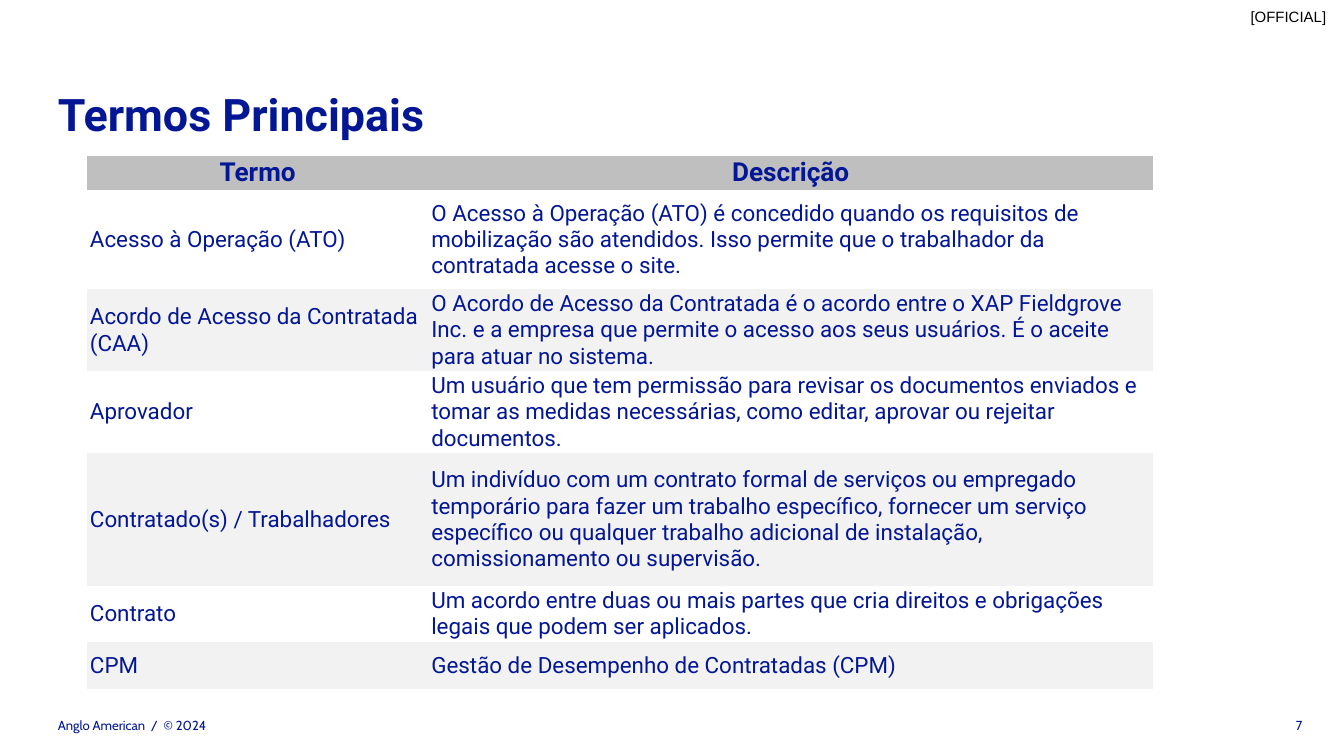
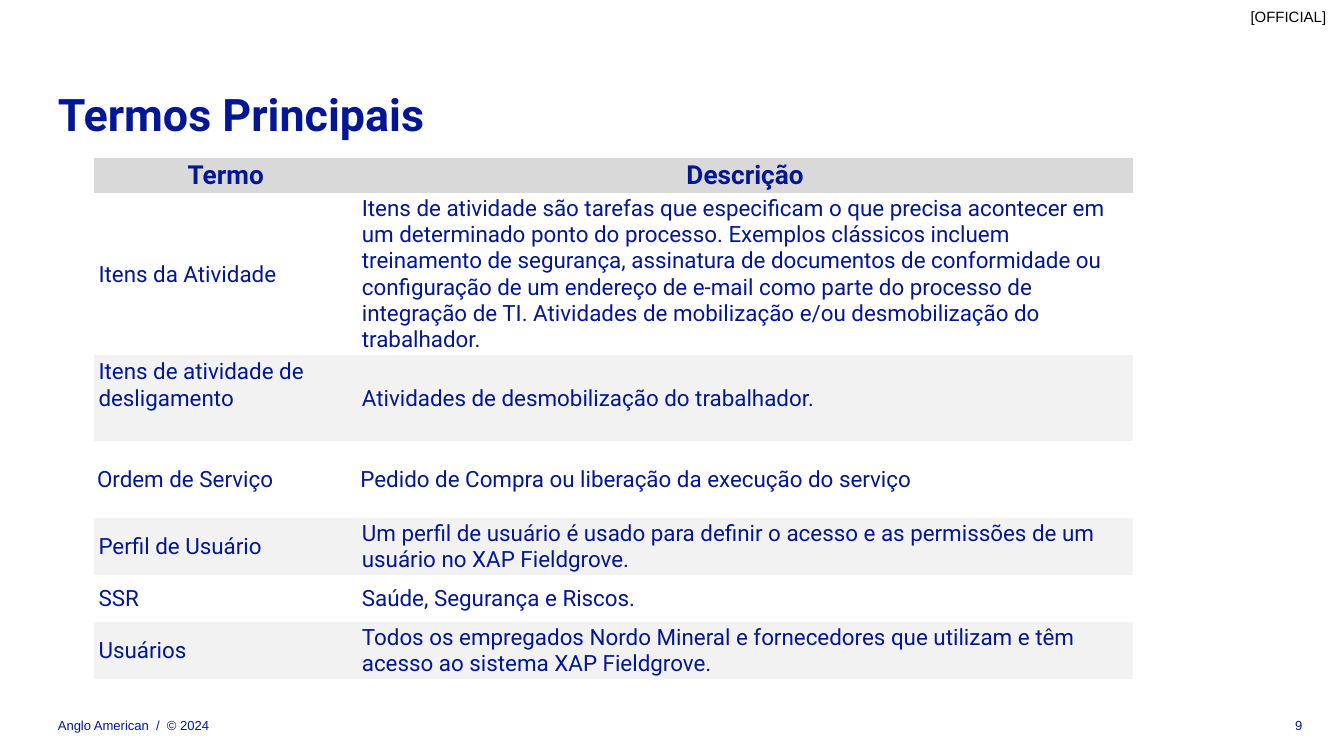
import dataclasses

import pptx
import pptx.dml.color
import pptx.enum.text
import pptx.oxml.ns
import pptx.util

Pt = pptx.util.Pt
Align = pptx.enum.text.PP_ALIGN
Anchor = pptx.enum.text.MSO_ANCHOR


@dataclasses.dataclass(frozen=True)
class Theme:
    blue: str = "031795"
    black: str = "000000"
    band: str = "F2F2F2"
    text_font: str = "Roboto"
    mark_font: str = "Arial"
    title_size: float = 24
    title_line: float = 49.5
    header_size: float = 14
    cell_size: float = 12
    mark_size: float = 8
    footer_size: float = 7
    plain_table: str = "{2D5ABB26-0587-4C30-8999-92F81FD0307C}"


THEME = Theme()
TITLE_ONLY = 5
LEFT = 31


@dataclasses.dataclass(frozen=True)
class Glossary:
    """One page of terms; each row is (height, term, description)."""
    page: str
    footer_font: str
    header_fill: str
    left: float
    top: float
    columns: tuple
    header_height: float
    inset: tuple
    rows: tuple
    row_insets: dict = dataclasses.field(default_factory=dict)
    extra_bottom: dict = dataclasses.field(default_factory=dict)


GLOSSARIES = (
    Glossary(
        page="7", footer_font="Cabin", header_fill="BFBFBF",
        left=46.6, top=83.6, columns=(182.9, 388.3), header_height=18.2,
        inset=(1.6, 0.8),
        rows=(
            (53.2, "Acesso à Operação (ATO)",
             "O Acesso à Operação (ATO) é concedido quando os requisitos de mobilização "
             "são atendidos. Isso permite que o trabalhador da contratada acesse o site."),
            (43.9, "Acordo de Acesso da Contratada (CAA)",
             "O Acordo de Acesso da Contratada é o acordo entre o XAP Fieldgrove Inc. e a "
             "empresa que permite o acesso aos seus usuários. É o aceite para atuar no sistema."),
            (43.9, "Aprovador",
             "Um usuário que tem permissão para revisar os documentos enviados e tomar as "
             "medidas necessárias, como editar, aprovar ou rejeitar documentos."),
            (71.2, "Contratado(s) / Trabalhadores",
             "Um indivíduo com um contrato formal de serviços ou empregado temporário para "
             "fazer um trabalho específico, fornecer um serviço específico ou qualquer "
             "trabalho adicional de instalação, comissionamento ou supervisão."),
            (30, "Contrato",
             "Um acordo entre duas ou mais partes que cria direitos e obrigações legais que "
             "podem ser aplicados."),
            (25.2, "CPM", "Gestão de Desempenho de Contratadas (CPM)"),
        ),
    ),
    Glossary(
        page="9", footer_font="Arial", header_fill="D9D9D9",
        left=50.4, top=84.6, columns=(141.1, 415.5), header_height=18.8,
        inset=(2.4, 1.2),
        rows=(
            (86.8, "Itens da Atividade",
             "Itens de atividade são tarefas que especificam o que precisa acontecer em um "
             "determinado ponto do processo. Exemplos clássicos incluem treinamento de "
             "segurança, assinatura de documentos de conformidade ou configuração de um "
             "endereço de e-mail como parte do processo de integração de TI. Atividades de "
             "mobilização e/ou desmobilização do trabalhador."),
            (46.1, "Itens de atividade de desligamento",
             "Atividades de desmobilização do trabalhador."),
            (41, "Ordem de Serviço", "Pedido de Compra ou liberação da execução do serviço"),
            (30.5, "Perfil de Usuário",
             "Um perfil de usuário é usado para definir o acesso e as permissões de um "
             "usuário no XAP Fieldgrove."),
            (25.2, "SSR", "Saúde, Segurança e Riscos."),
            (30.5, "Usuários",
             "Todos os empregados Nordo Mineral e fornecedores que utilizam e têm acesso ao "
             "sistema XAP Fieldgrove."),
        ),
        row_insets={3: (1.6, 0.8)},
        extra_bottom={(2, 0): 14},
    ),
)


def style_text(frame, font, size, color, align=Align.LEFT, bold=False):
    for para in frame.paragraphs:
        para.alignment = align
        for span in para.runs:
            span.font.name = font
            span.font.size = Pt(size)
            span.font.bold = bold
            span.font.color.rgb = pptx.dml.color.RGBColor.from_string(color)


def set_frame(frame, anchor):
    frame.margin_left = frame.margin_top = frame.margin_right = frame.margin_bottom = 0
    frame.word_wrap = True
    frame.auto_size = pptx.enum.text.MSO_AUTO_SIZE.NONE
    frame.vertical_anchor = anchor


def add_label(page, place, text, font, size, color, align=Align.LEFT):
    box = page.shapes.add_textbox(*map(Pt, place))
    set_frame(box.text_frame, Anchor.MIDDLE)
    box.text_frame.text = text
    style_text(box.text_frame, font, size, color, align)


def set_title(page, text):
    title = page.shapes.title
    title.left, title.top, title.width, title.height = map(Pt, (LEFT, 26, 657.4, 39.6))
    set_frame(title.text_frame, Anchor.TOP)
    title.text_frame.text = text
    title.text_frame.paragraphs[0].line_spacing = Pt(THEME.title_line)
    style_text(title.text_frame, THEME.text_font, THEME.title_size, THEME.blue, bold=True)


def add_marks(page, number, footer_font):
    """Add the classification mark, the page number and the footer."""
    add_label(page, (660.2, 0, 50.4, 17.3), "[OFFICIAL]",
              THEME.mark_font, THEME.mark_size, THEME.black, Align.RIGHT)
    add_label(page, (688.3, 384.5, 9.4, 8.6), number,
              footer_font, THEME.footer_size, THEME.blue, Align.RIGHT)
    add_label(page, (LEFT, 384.5, 625.7, 8.6), "Anglo American  /  © 2024",
              footer_font, THEME.footer_size, THEME.blue)


def fill_cell(cell, text, inset, fill, is_header):
    cell.margin_left = cell.margin_right = Pt(inset[0])
    cell.margin_top = cell.margin_bottom = Pt(inset[1])
    cell.vertical_anchor = Anchor.MIDDLE
    if fill:
        cell.fill.solid()
        cell.fill.fore_color.rgb = pptx.dml.color.RGBColor.from_string(fill)
    else:
        cell.fill.background()
    cell.text_frame.text = text
    style_text(cell.text_frame, THEME.text_font,
               THEME.header_size if is_header else THEME.cell_size, THEME.blue,
               Align.CENTER if is_header else Align.LEFT, is_header)


def add_glossary_table(page, glossary):
    rows = ((glossary.header_height, "Termo", "Descrição"),) + glossary.rows
    width, height = sum(glossary.columns), sum(row[0] for row in rows)
    holder = page.shapes.add_table(len(rows), len(glossary.columns), Pt(glossary.left),
                                   Pt(glossary.top), Pt(width), Pt(height))
    for style in holder.element.iter(pptx.oxml.ns.qn("a:tableStyleId")):
        style.text = THEME.plain_table
    table = holder.table
    table.horz_banding = False
    for column, column_width in zip(table.columns, glossary.columns):
        column.width = Pt(column_width)
    for index, (row_height, *texts) in enumerate(rows):
        table.rows[index].height = Pt(row_height)
        is_header = index == 0
        band = THEME.band if index % 2 == 0 else None
        fill = glossary.header_fill if is_header else band
        inset = glossary.row_insets.get(index, glossary.inset)
        for position, text in enumerate(texts):
            cell = table.cell(index, position)
            fill_cell(cell, text, inset, fill, is_header)
            extra = glossary.extra_bottom.get((index, position), 0)
            cell.margin_bottom = Pt(inset[1] + extra)


def main():
    deck = pptx.Presentation()
    deck.slide_width, deck.slide_height = Pt(720), Pt(405)
    for glossary in GLOSSARIES:
        page = deck.slides.add_slide(deck.slide_layouts[TITLE_ONLY])
        set_title(page, "Termos Principais")
        add_marks(page, glossary.page, glossary.footer_font)
        add_glossary_table(page, glossary)
    deck.save("out.pptx")


if __name__ == "__main__":
    main()
